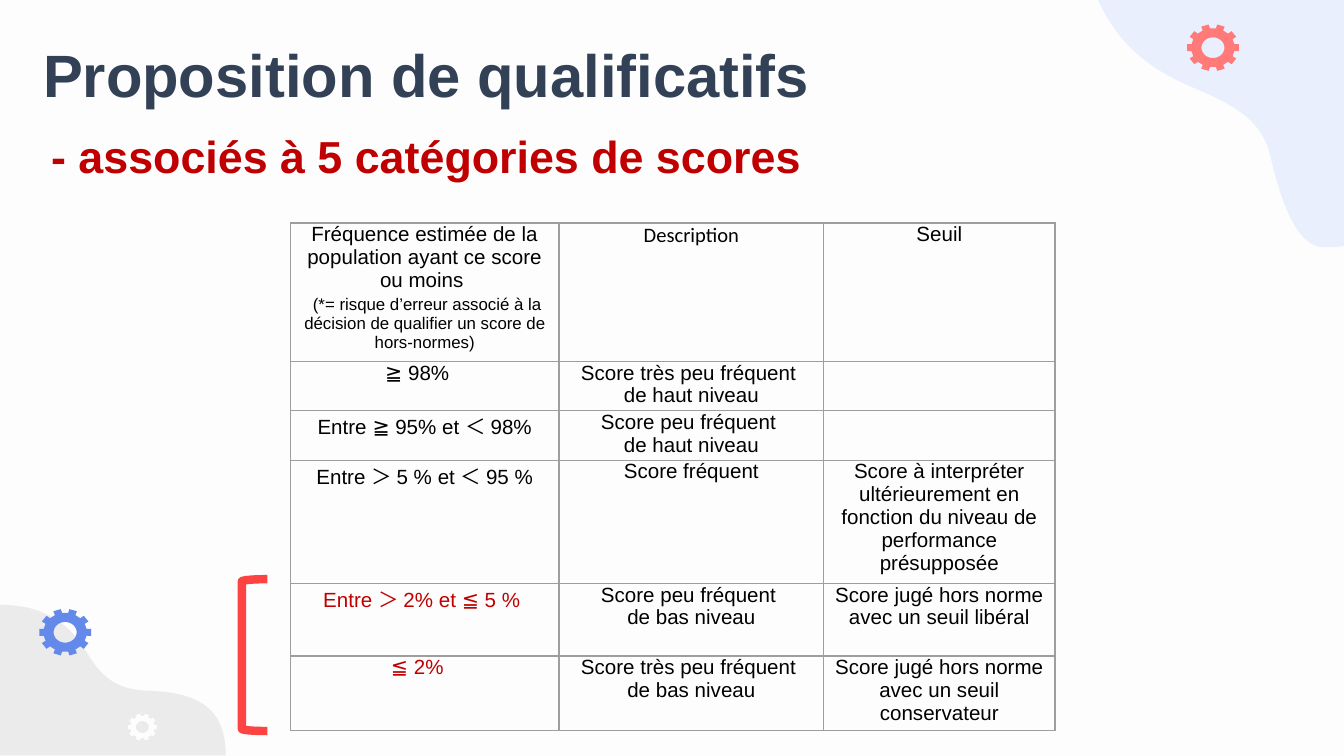
from math import cos, pi, sin

from lxml.etree import SubElement
from pptx import Presentation
from pptx.dml.color import RGBColor
from pptx.enum.shapes import MSO_SHAPE
from pptx.enum.text import MSO_ANCHOR, PP_ALIGN
from pptx.oxml.ns import qn
from pptx.util import Inches, Pt

COLORS = {
    "background": "FDFDFD", "title": "334157", "accent": "C00000",
    "text": "000000", "border": "9E9E9E", "bracket": "FE4343",
    "sky": "E9EFFC", "gray": "EBEBEB", "coral": "FF7A78", "blue": "6389EB",
}

SLIDE_WIDTH = Inches(10)
SLIDE_HEIGHT = SLIDE_WIDTH * 9 // 16

COLUMN_WIDTHS = [2, 1.97, 1.72]
ROW_HEIGHTS = [1.02, 0.36, 0.36, 0.9, 0.54, 0.54]
# Each line of a cell is one paragraph
ROWS = [
    ["Fréquence estimée de la population ayant ce score ou moins \n"
     " (*= risque d’erreur associé à la décision de qualifier un score de hors-normes)",
     "Description", "Seuil"],
    ["≧ 98%", "Score très peu fréquent \nde haut niveau", ""],
    ["Entre ≧ 95% et ＜ 98%", "Score peu fréquent \nde haut niveau", ""],
    ["Entre ＞ 5 % et ＜ 95 %", "Score fréquent",
     "Score à interpréter ultérieurement en fonction du niveau de performance présupposée"],
    ["Entre ＞ 2% et ≦ 5 % ", "Score peu fréquent \nde bas niveau",
     "Score jugé hors norme\navec un seuil libéral"],
    ["≦ 2%", "Score très peu fréquent \nde bas niveau",
     "Score jugé hors norme\navec un seuil conservateur"],
]

# Cubic segments: two control points and an end point
TOP_BLOB = [
    [(8.32, 0.33), (8.55, 0.51), (8.85, 0.64)],
    [(9.15, 0.77), (9.38, 0.87), (9.45, 1.15)],
    [(9.53, 1.5), (9.65, 1.84), (9.85, 1.84)],
    [(9.9, 1.84), (9.95, 1.84), (10, 1.83)],
]
BOTTOM_BLOB = [
    [(0.3, 4.5), (0.5, 4.62), (0.63, 4.83)],
    [(0.75, 5.03), (0.85, 5.13), (1.1, 5.14)],
    [(1.45, 5.15), (1.68, 5.25), (1.68, 5.62)],
]


def rgb(name):
    return RGBColor.from_string(COLORS[name])


def set_font(p, size, color, name="Arial", bold=False):
    p.font.size, p.font.name, p.font.bold = Pt(size), name, bold
    p.font.color.rgb = rgb(color)


def add_outline(s, contours, color):
    contours = [[(Inches(x), Inches(y)) for x, y in c] for c in contours]
    builder = s.shapes.build_freeform(*contours[0][0])
    builder.add_line_segments(contours[0][1:], close=True)
    for contour in contours[1:]:
        builder.move_to(*contour[0])
        builder.add_line_segments(contour[1:], close=True)
    sp = builder.convert_to_shape()
    sp.shadow.inherit = False
    sp.fill.solid()
    sp.fill.fore_color.rgb = rgb(color)
    sp.line.fill.background()


def add_blob(s, start, curves, corner, color, steps=16):
    points = [start]
    for a, b, end in curves:
        begin = points[-1]
        for i in range(1, steps + 1):
            t = i / steps
            u = 1 - t
            points.append(tuple(
                u**3 * begin[k] + 3 * u * u * t * a[k] + 3 * u * t * t * b[k] + t**3 * end[k]
                for k in (0, 1)))
    add_outline(s, [points + [corner]], color)


def add_gear(s, left, top, width, height, color, teeth=10):
    def point(radius, angle):
        return (left + width / 2 * (1 + radius * cos(angle)),
                top + height / 2 * (1 + radius * sin(angle)))

    step = 2 * pi / teeth
    rim = [point(radius, (i + shift) * step)
           for i in range(teeth)
           for radius, shift in ((1, -0.24), (1, 0.24), (0.83, 0.28), (0.83, 0.72))]
    hole = [point(0.44, -2 * pi * i / 40) for i in range(40)]
    add_outline(s, [rim, hole], color)


def add_decor(s):
    add_blob(s, (8.17, 0), TOP_BLOB, (10, 0), "sky")
    add_blob(s, (0, 4.5), BOTTOM_BLOB, (0, 5.62), "gray")
    add_gear(s, 8.83, 0.18, 0.39, 0.35, "coral")
    add_gear(s, 0.29, 4.53, 0.39, 0.35, "blue")
    add_gear(s, 0.95, 5.31, 0.22, 0.2, "background")


def add_headings(s, left, top):
    # Title
    title = s.shapes.title
    title.left, title.top = Inches(left + 0.03), Inches(top)
    title.width, title.height = Inches(8.44), Inches(0.63)
    tf = title.text_frame
    tf.text = "Proposition de qualificatifs"
    tf.vertical_anchor = MSO_ANCHOR.TOP
    tf.margin_left = tf.margin_right = tf.margin_top = tf.margin_bottom = Inches(0.1)
    tf.paragraphs[0].alignment = PP_ALIGN.LEFT
    set_font(tf.paragraphs[0], 32, "title", bold=True)
    # Subtitle
    box = s.shapes.add_textbox(Inches(left), Inches(top + 0.73), Inches(6.3), Inches(0.5))
    tf = box.text_frame
    tf.word_wrap = True
    p = tf.paragraphs[0]
    p.text = " - associés à 5 catégories de scores"
    set_font(p, 24, "accent", bold=True)


def set_borders(cell):
    tc_pr = cell._tc.get_or_add_tcPr()
    for i, side in enumerate(("a:lnL", "a:lnR", "a:lnT", "a:lnB")):
        ln = tc_pr.makeelement(qn(side), {"w": str(Pt(0.75))})
        tc_pr.insert(i, ln)
        fill = SubElement(ln, qn("a:solidFill"))
        SubElement(fill, qn("a:srgbClr"), val=COLORS["border"])


def fill_cell(cell, text, row, col):
    cell.fill.background()
    set_borders(cell)
    cell.margin_left = cell.margin_right = Inches(0.07)
    cell.margin_top = cell.margin_bottom = 0
    if col == 0 and row in (1, 5):
        cell.margin_right = Inches(0.18)
    cell.text = text
    for i, p in enumerate(cell.text_frame.paragraphs):
        note = row == 0 and i == 1
        p.alignment = PP_ALIGN.CENTER
        if note:
            p.space_before = Pt(2)
        set_font(p, 9 if note else 11,
                 "accent" if col == 0 and row >= 4 else "text",
                 "Calibri" if (row, col) == (0, 1) else "Arial")


def add_score_table(s, left, top):
    frame = s.shapes.add_table(
        len(ROWS), len(COLUMN_WIDTHS), Inches(left), Inches(top),
        Inches(sum(COLUMN_WIDTHS)), Inches(sum(ROW_HEIGHTS)))
    table = frame.table
    table.first_row = table.horz_banding = False
    for column, width in zip(table.columns, COLUMN_WIDTHS):
        column.width = Inches(width)
    for r, (texts, height) in enumerate(zip(ROWS, ROW_HEIGHTS)):
        table.rows[r].height = Inches(height)
        for c, text in enumerate(texts):
            fill_cell(table.cell(r, c), text, r, c)


def add_bracket(s, left, top, width, height):
    sp = s.shapes.add_shape(
        MSO_SHAPE.LEFT_BRACKET, Inches(left), Inches(top), Inches(width), Inches(height))
    sp.shadow.inherit = False
    sp.fill.background()
    sp.line.color.rgb = rgb("bracket")
    sp.line.width = Pt(4.5)


def main():
    prs = Presentation()
    prs.slide_width, prs.slide_height = SLIDE_WIDTH, SLIDE_HEIGHT
    s = prs.slides.add_slide(prs.slide_layouts[5])
    s.background.fill.solid()
    s.background.fill.fore_color.rgb = rgb("background")
    add_decor(s)
    add_headings(s, 0.19, 0.18)
    add_score_table(s, 2.16, 1.66)
    # Bracket beside the two lowest categories
    add_bracket(s, 1.8, 4.31, 0.19, 1.13)
    prs.save("out.pptx")


if __name__ == "__main__":
    main()
